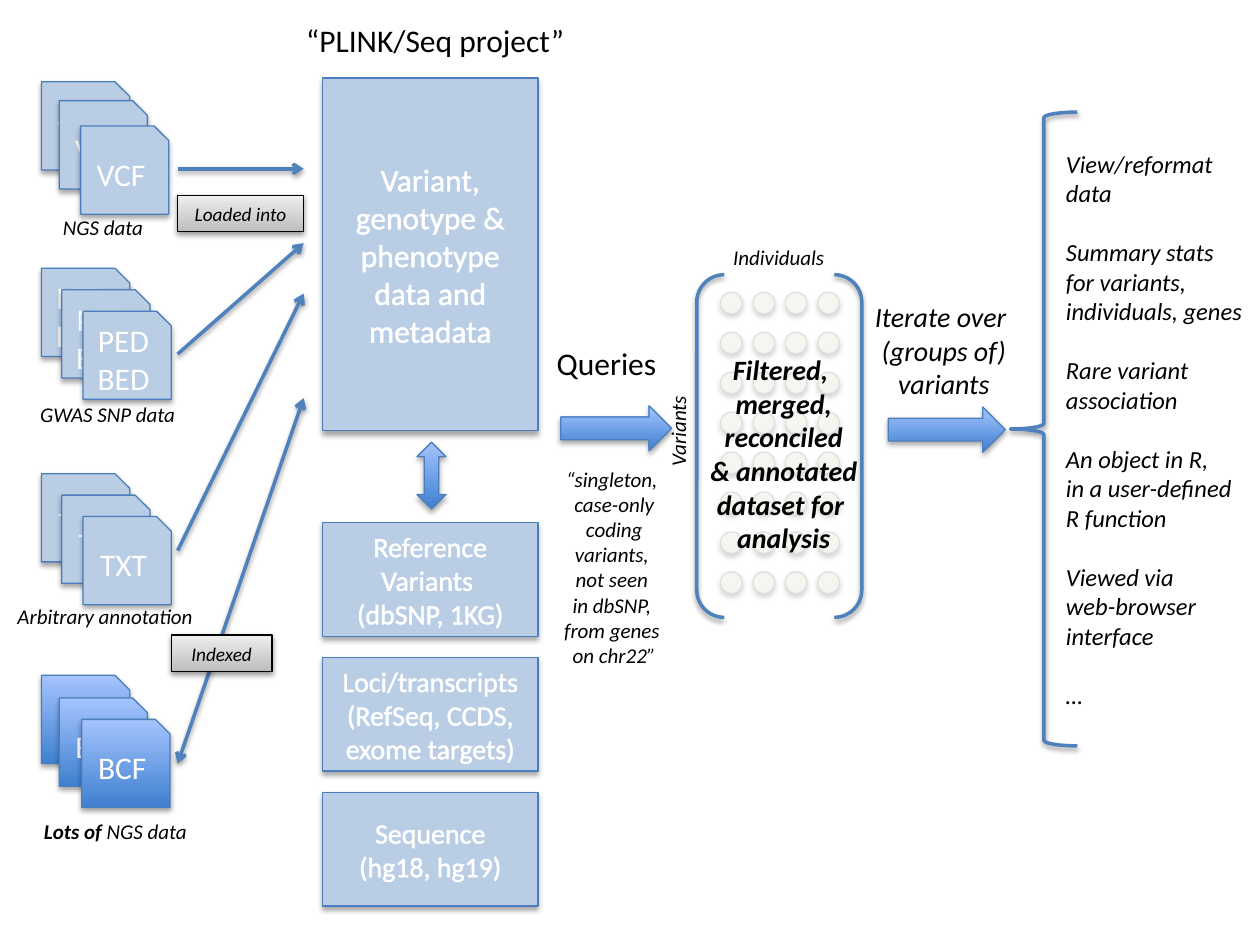
"""Build a one-slide diagram of a genetic variant data project."""
from dataclasses import dataclass
from itertools import product

from pptx import Presentation
from pptx.dml.color import RGBColor
from pptx.enum.shapes import MSO_CONNECTOR, MSO_SHAPE as SHP
from pptx.enum.text import MSO_ANCHOR as ANC, MSO_AUTO_SIZE as FIT, PP_ALIGN as AL
from pptx.oxml import parse_xml
from pptx.oxml.ns import nsdecls
from pptx.util import Inches, Pt

WIDTH, HEIGHT = Inches(10), Inches(7.5)
COL, ROW = WIDTH / 100, HEIGHT / 75
FONT = "Calibri"
COLORS = {
    "black": "000000", "white": "FFFFFF", "pale": "B9CDE5", "edge": "4B7EBC",
    "line": "4F81BD", "deep": "3F80CE", "sky": "A4C4FF", "steel": "BDBDBD",
    "silver": "EEEEEE", "dot": "EEECE1", "dot_edge": "BFBFBF",
}
BLUE, GREY = ("deep", "sky"), ("steel", "silver")


@dataclass(frozen=True)
class Box:
    x: float
    y: float
    w: float
    h: float

    def emu(self) -> tuple[int, ...]:
        return tuple(round(v) for v in (self.x * COL, self.y * ROW, self.w * COL, self.h * ROW))


@dataclass(frozen=True)
class Style:
    size: float
    color: str = "black"
    bold: bool = False
    italic: bool = True
    align: AL = AL.CENTER
    outline: bool = False


@dataclass(frozen=True)
class Look:
    fill: str | tuple[str, str] | None
    line: str | None = "edge"
    width: float = 0.75
    shadow: tuple[int, float] = (35, 1.8)


@dataclass(frozen=True)
class Stack:
    text: str
    y: float
    steps: tuple[tuple[float, float], ...]
    look: Look


@dataclass(frozen=True)
class Label:
    text: str
    box: Box
    style: Style
    lead: str = ""
    turn: float = 0


@dataclass(frozen=True)
class Arrow:
    start: tuple[float, float]
    end: tuple[float, float]
    both: bool = False


PALE, SHINY = Look("pale"), Look(BLUE)
TAG = Look(GREY, "black", shadow=(38, 1.6))
FRAME = Look(None, "line", 2, (38, 1.6))
DOT = Look("dot", "dot_edge")
FILE, TAG_TEXT, NOTE = Style(18, "white", italic=False), Style(11), Style(12)
CAPTION = Style(12, align=AL.LEFT)
HEADING = Style(18, italic=False, align=AL.LEFT)
STORE = Style(16, "white", italic=False, outline=True)
EVEN = ((0, 0), (1.6, 1.7), (3.3, 3.4))

STACKS = [
    Stack("VCF", 6.5, ((0, 0), (1.4, 1.5), (3.1, 3.5)), PALE),
    Stack("PED\nBED", 21.3, EVEN, PALE),
    Stack("TXT", 37.6, EVEN, PALE),
    Stack("BCF", 53.6, ((0, 0), (1.4, 1.8), (3.2, 3.5)), SHINY),
]
STORES = ["Reference Variants \n(dbSNP, 1KG)", "Loci/transcripts (RefSeq, CCDS, exome targets)",
          "Sequence\n(hg18, hg19)"]
ARROWS = [
    Arrow((14.1, 13.4), (24.1, 13.4)), Arrow((14.1, 28.1), (24.1, 19.3)),
    Arrow((14.1, 43.7), (24.1, 23.3)), Arrow((14.1, 60.6), (24.1, 31.6), True),
]
BLOCKS = [
    (SHP.UP_DOWN_ARROW, Box(33.1, 35.1, 2.3, 5.3)), (SHP.RIGHT_ARROW, Box(44.5, 32.2, 8.8, 3.6)),
    (SHP.RIGHT_ARROW, Box(70.5, 32.3, 9.3, 3.6)),
]
TAGS = [("Loaded into", Box(14.1, 15.5, 10, 2.9)), ("Indexed", Box(13.6, 50.4, 8, 2.9))]
LABELS = [
    Label("NGS data", Box(4, 16.5, 8.8, 3), CAPTION),
    Label("GWAS SNP data", Box(2.2, 31.4, 13.2, 3), CAPTION),
    Label("Arbitrary annotation", Box(0.4, 47.4, 16.5, 3), CAPTION),
    Label(" NGS data", Box(2.5, 64.5, 13.8, 3), CAPTION, lead="Lots of"),
    Label("Queries", Box(43.2, 26.8, 10, 4), HEADING),
    Label("“singleton, \ncase-only\n coding \nvariants, \nnot seen \nin dbSNP, \nfrom genes \non chr22”",
          Box(43.7, 36.5, 10.1, 17.2), NOTE),
    Label("Iterate over \n(groups of)\nvariants", Box(68.3, 23.3, 13.2, 9.1), Style(16)),
    Label("Individuals", Box(57.2, 18.9, 9.7, 3), CAPTION),
    Label("Variants", Box(49.8, 32.5, 8, 3), CAPTION, turn=270),
]
DATASET = Label("Filtered, \nmerged,\nreconciled\n& annotated\ndataset for \nanalysis",
                Box(55, 27.5, 14.4, 17.2), Style(16, bold=True))
OUTPUTS = [
    "View/reformat\ndata", "Summary stats\nfor variants,\nindividuals, genes", "Rare variant\nassociation",
    "An object in R,\nin a user-defined\nR function", "Viewed via\nweb-browser\ninterface", "…",
]


def rgb(name: str) -> RGBColor:
    return RGBColor.from_string(COLORS[name])


def apply(target, values: dict) -> None:
    for name, value in values.items():
        setattr(target, name, value)


def add_run(p, text: str, st: Style, bold: bool) -> None:
    r = p.add_run()
    r.text = text
    apply(r.font, {"name": FONT, "size": Pt(st.size), "bold": bold, "italic": st.italic})
    r.font.color.rgb = rgb(st.color)
    if st.outline:
        r.font._element.insert(0, parse_xml(
            f'<a:ln {nsdecls("a")} w="18415"><a:solidFill><a:srgbClr val="{COLORS["white"]}"/>'
            '</a:solidFill></a:ln>'))


def write(tf, text: str, st: Style, lead: str = "") -> None:
    for i, line in enumerate(text.split("\n")):
        p = tf.add_paragraph() if i else tf.paragraphs[0]
        p.alignment = st.align
        if lead:
            add_run(p, lead, st, True)
        add_run(p, line, st, st.bold)


def cast_shadow(item, shadow: tuple[int, float]) -> None:
    alpha, dist = shadow
    item._element.spPr.append(parse_xml(
        f'<a:effectLst {nsdecls("a")}><a:outerShdw blurRad="{Pt(3.1)}" dist="{Pt(dist)}" dir="5400000" '
        f'rotWithShape="0"><a:srgbClr val="{COLORS["black"]}"><a:alpha val="{alpha * 1000}"/></a:srgbClr>'
        '</a:outerShdw></a:effectLst>'))


def draw_shape(s, kind: SHP, box: Box, look: Look, text: str = "", st: Style = FILE):
    sp = s.shapes.add_shape(kind, *box.emu())
    if look.fill is None:
        sp.fill.background()
    elif isinstance(look.fill, tuple):
        sp.fill.gradient()
        sp.fill.gradient_angle = 90
        for stop, name in zip(sp.fill.gradient_stops, look.fill):
            stop.color.rgb = rgb(name)
    else:
        sp.fill.solid()
        sp.fill.fore_color.rgb = rgb(look.fill)
    sp.line.color.rgb = rgb(look.line)
    sp.line.width = Pt(look.width)
    cast_shadow(sp, look.shadow)
    if text:
        write(sp.text_frame, text, st)
    return sp


def draw_label(s, label: Label) -> None:
    sp = s.shapes.add_textbox(*label.box.emu())
    sp.rotation = label.turn
    apply(sp.text_frame, {"word_wrap": False, "auto_size": FIT.SHAPE_TO_FIT_TEXT})
    write(sp.text_frame, label.text, label.style, label.lead)


def draw_arrow(s, arrow: Arrow) -> None:
    points = [round(v * unit) for pt in (arrow.start, arrow.end) for v, unit in zip(pt, (COL, ROW))]
    cn = s.shapes.add_connector(MSO_CONNECTOR.STRAIGHT, *points)
    cn.line.color.rgb = rgb("line")
    cn.line.width = Pt(2)
    for end in (("headEnd", "tailEnd") if arrow.both else ("tailEnd",)):
        cn.line._ln.append(parse_xml(f'<a:{end} {nsdecls("a")} type="arrow"/>'))
    cast_shadow(cn, FRAME.shadow)


def draw_veil(s, box: Box) -> None:
    sp = s.shapes.add_shape(SHP.RECTANGLE, *box.emu())
    sp.shadow.inherit = False
    sp.line.fill.background()
    sp.fill.solid()
    sp.fill.fore_color.rgb = rgb("white")
    clr = sp._element.spPr.find(".//{*}srgbClr")
    clr.append(parse_xml(f'<a:alpha {nsdecls("a")} val="52000"/>'))


def fill_placeholder(sp, box: Box, groups: list[str], st: Style, gap: float) -> None:
    apply(sp, dict(zip(("left", "top", "width", "height"), box.emu())))
    tf = sp.text_frame
    apply(tf, {"word_wrap": False, "auto_size": FIT.NONE, "vertical_anchor": ANC.TOP})
    write(tf, "\n".join(groups), st)
    firsts = {sum(len(g.split("\n")) for g in groups[:i]) for i in range(1, len(groups))}
    for i, p in enumerate(tf.paragraphs):
        p.space_before = Pt(gap if i in firsts else 0)
        pPr = p._p.get_or_add_pPr()
        apply_xml = {"marL": "0", "indent": "0"}
        for name, value in apply_xml.items():
            pPr.set(name, value)
        pPr.append(parse_xml(f'<a:buNone {nsdecls("a")}/>'))


def main() -> None:
    prs = Presentation()
    apply(prs, {"slide_width": WIDTH, "slide_height": HEIGHT})
    s = prs.slides.add_slide(prs.slide_layouts[1])
    fill_placeholder(s.shapes.title, Box(23.3, 1.2, 22.7, 4), ["“PLINK/Seq project”"], HEADING, 0)
    fill_placeholder(s.placeholders[1], Box(83.6, 11.3, 16.4, 45.8), OUTPUTS, Style(14, align=AL.LEFT), 17)
    for stack in STACKS:
        for dx, dy in stack.steps:
            draw_shape(s, SHP.SNIP_1_RECTANGLE, Box(3.3 + dx, stack.y + dy, 7, 7), stack.look, stack.text)
    draw_shape(s, SHP.RECTANGLE, Box(25.6, 6.2, 17.1, 28), PALE,
               "Variant, genotype & phenotype\ndata and metadata", Style(18, "white", italic=False, outline=True))
    for i, text in enumerate(STORES):
        draw_shape(s, SHP.RECTANGLE, Box(25.6, 41.5 + 10.7 * i, 17.1, 9), PALE, text, STORE)
    for arrow in ARROWS:
        draw_arrow(s, arrow)
    for kind, box in BLOCKS:
        draw_shape(s, kind, box, SHINY)
    for text, box in TAGS:
        draw_shape(s, SHP.RECTANGLE, box, TAG, text, TAG_TEXT)
    draw_shape(s, SHP.LEFT_BRACE, Box(80.2, 8.9, 5.3, 50.3), FRAME)
    for row, col in product(range(8), range(4)):
        draw_shape(s, SHP.OVAL, Box(57.2 + 2.57 * col, 23.2 + 3.17 * row, 1.7, 1.7), DOT)
    draw_shape(s, SHP.DOUBLE_BRACKET, Box(55.3, 21.8, 13.1, 27.2), FRAME)
    draw_veil(s, Box(56.4, 22.7, 11, 25.5))
    for label in [*LABELS, DATASET]:
        draw_label(s, label)
    prs.save("out.pptx")


if __name__ == "__main__":
    main()
